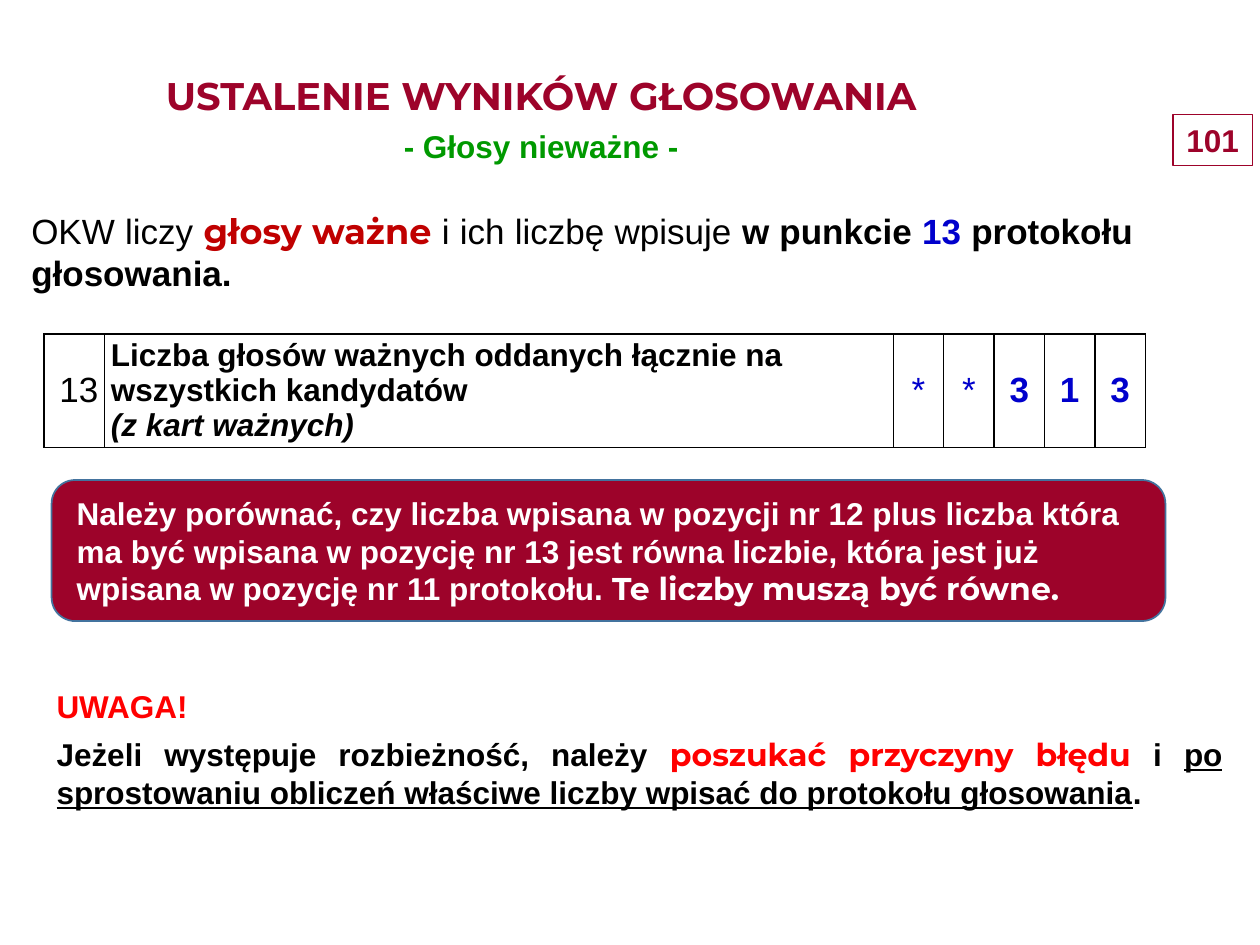
from typing import NamedTuple, Optional

from lxml.etree import SubElement
from pptx import Presentation
from pptx.dml.color import RGBColor
from pptx.enum.shapes import MSO_SHAPE as Shape
from pptx.enum.text import MSO_ANCHOR as Anchor, PP_ALIGN as Align
from pptx.oxml.ns import qn
from pptx.util import Emu, Inches, Pt

BLACK = RGBColor(0x00, 0x00, 0x00)
WHITE = RGBColor(0xFF, 0xFF, 0xFF)
MAROON = RGBColor(0x9D, 0x03, 0x2A)
CRIMSON = RGBColor(0xC0, 0x00, 0x00)
RED = RGBColor(0xFF, 0x00, 0x00)
GREEN = RGBColor(0x00, 0x99, 0x00)
BLUE = RGBColor(0x00, 0x00, 0xCC)
STEEL = RGBColor(0x43, 0x73, 0x9E)

BODY, ACCENT = "Arial", "Montserrat"
WIDTH, HEIGHT = Inches(10), Inches(7.5)


class Box(NamedTuple):
    """Left, top, width and height as percentages of the slide's size."""
    left: float
    top: float
    width: float
    height: float

    def emu(self) -> list[Emu]:
        sides = (WIDTH, HEIGHT, WIDTH, HEIGHT)
        return [Emu(round(side * share / 100)) for side, share in zip(sides, self)]


class Run(NamedTuple):
    text: str
    color: RGBColor = BLACK
    size: float = 18
    font: str = BODY
    bold: bool = True
    italic: bool = False
    underline: bool = False


class Para(NamedTuple):
    runs: list[Run]
    align: Align = Align.LEFT
    before: float = 0
    after: float = 0


class Cell(NamedTuple):
    columns: float
    lines: list[Run]
    align: Align = Align.CENTER


def add_run(p, run: Run) -> None:
    r = p.add_run()
    r.text = run.text
    f = r.font
    f.name, f.size = run.font, Pt(run.size)
    f.bold, f.italic, f.underline = run.bold, run.italic, run.underline
    f.color.rgb = run.color


def fill_text(tf, paras: list[Para]) -> None:
    tf.word_wrap = True
    for i, para in enumerate(paras):
        p = tf.paragraphs[0] if i == 0 else tf.add_paragraph()
        p.alignment = para.align
        p.space_before, p.space_after = Pt(para.before), Pt(para.after)
        for run in para.runs:
            add_run(p, run)


def add_text(s, box: Box, paras: list[Para]) -> None:
    fill_text(s.shapes.add_textbox(*box.emu()).text_frame, paras)


def add_panel(s, kind: Shape, box: Box, line: RGBColor, weight: float,
              fill: Optional[RGBColor] = None):
    sp = s.shapes.add_shape(kind, *box.emu())
    sp.shadow.inherit = False
    if fill is None:
        sp.fill.background()
    else:
        sp.fill.solid()
        sp.fill.fore_color.rgb = fill
    sp.line.color.rgb = line
    sp.line.width = Pt(weight)
    return sp


def set_borders(cell, color: RGBColor, weight: float) -> None:
    props = cell._tc.get_or_add_tcPr()
    for i, side in enumerate(("lnL", "lnR", "lnT", "lnB")):
        ln = props.makeelement(qn(f"a:{side}"), {"w": str(Pt(weight))})
        SubElement(SubElement(ln, qn("a:solidFill")), qn("a:srgbClr"), val=str(color))
        props.insert(i, ln)


def add_protocol_row(s, box: Box, cells: list[Cell]) -> None:
    frame = s.shapes.add_table(1, len(cells), *box.emu())
    table = frame.table
    table.first_row = table.horz_banding = False
    unit = frame.width / sum(c.columns for c in cells)
    for i, spec_cell in enumerate(cells):
        table.columns[i].width = Emu(round(unit * spec_cell.columns))
        cell = table.cell(0, i)
        cell.fill.background()
        cell.vertical_anchor = Anchor.MIDDLE
        cell.margin_left = cell.margin_right = Inches(0.05)
        cell.margin_top = cell.margin_bottom = 0
        p = cell.text_frame.paragraphs[0]
        p.alignment = spec_cell.align
        for n, run in enumerate(spec_cell.lines):
            if n:
                p.add_line_break()
            add_run(p, run)
        set_borders(cell, BLACK, 1)


def main() -> None:
    prs = Presentation()
    prs.slide_width, prs.slide_height = WIDTH, HEIGHT
    s = prs.slides.add_slide(prs.slide_layouts[6])

    number = add_panel(s, Shape.RECTANGLE, Box(93.1, 12.13, 6.3, 5.4), MAROON, 0.75)
    fill_text(number.text_frame, [Para([Run("101", MAROON)], Align.CENTER)])
    add_panel(s, Shape.ROUNDED_RECTANGLE, Box(4.1, 50.8, 88.4, 14.93), STEEL, 1, MAROON)

    add_text(s, Box(1.5, 21.47, 89.4, 10.27), [Para([
        Run("OKW liczy ", size=20, bold=False),
        Run("głosy ważne ", CRIMSON, 20, ACCENT),
        Run("i ich liczbę wpisuje ", size=20, bold=False),
        Run("w punkcie ", size=20),
        Run("13", BLUE, 20),
        Run(" protokołu głosowania.", size=20),
    ], Align.JUSTIFY, after=12)])

    digits = [Cell(0.4, [Run(mark, BLUE, 20, bold=mark != "*")]) for mark in "**313"]
    add_protocol_row(s, Box(3.5, 35.33, 87.4, 12), [
        Cell(0.48, [Run("13", size=20, bold=False)], Align.RIGHT),
        Cell(6.26, [
            Run("Liczba głosów ważnych oddanych łącznie na wszystkich kandydatów"),
            Run("(z kart ważnych)", italic=True),
        ], Align.LEFT),
        *digits,
    ])

    add_text(s, Box(3.5, 72, 94.5, 14.53), [
        Para([Run("UWAGA!", RED)], Align.JUSTIFY, after=6),
        Para([
            Run("Jeżeli występuje rozbieżność, należy "),
            Run("poszukać przyczyny błędu ", RED, font=ACCENT),
            Run("i "),
            Run("po sprostowaniu obliczeń właściwe liczby wpisać do protokołu głosowania",
                underline=True),
            Run("."),
        ], Align.JUSTIFY),
    ])

    add_text(s, Box(5.1, 51.6, 87.4, 13.47), [Para([
        Run("Należy porównać, czy liczba wpisana w pozycji nr 12 plus liczba która ma być "
            "wpisana w pozycję nr 13 jest równa liczbie, która jest już wpisana w pozycję "
            "nr 11 protokołu. ", WHITE),
        Run("Te liczby muszą być równe.", WHITE, font=ACCENT),
    ])])

    add_text(s, Box(1.2, 6.93, 83.5, 11.2), [
        Para([Run("USTALENIE WYNIKÓW GŁOSOWANIA", MAROON, 22, ACCENT)], Align.CENTER),
        Para([Run("- Głosy nieważne -", GREEN)], Align.CENTER, before=5),
    ])

    prs.save("out.pptx")


if __name__ == "__main__":
    main()
